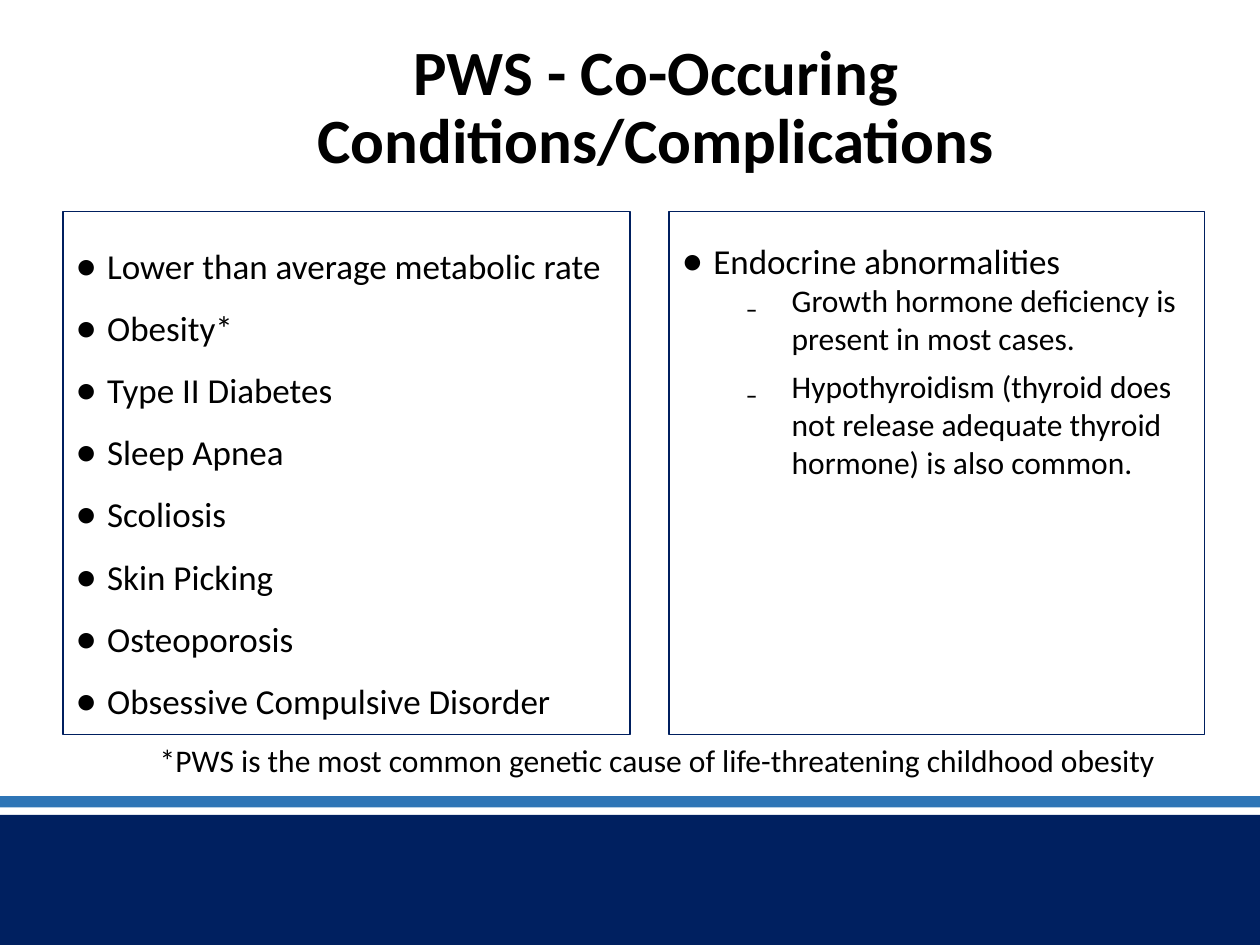
from dataclasses import dataclass

import pptx
import pptx.dml.color
import pptx.enum.shapes
import pptx.enum.text
import pptx.oxml
import pptx.oxml.ns
import pptx.util

Cm = pptx.util.Cm
Pt = pptx.util.Pt
ALIGN = pptx.enum.text.PP_ALIGN
ANCHOR = pptx.enum.text.MSO_ANCHOR
RECTANGLE = pptx.enum.shapes.MSO_SHAPE.RECTANGLE
FONT = "Calibri"
BLACK = "000000"


@dataclass(frozen=True)
class Area:
    left: float
    top: float
    width: float
    height: float

    def lengths(self) -> tuple:
        return Cm(self.left), Cm(self.top), Cm(self.width), Cm(self.height)


@dataclass(frozen=True)
class Level:
    mark: str
    size: float
    margin: float
    hanging: float
    depth: int = 0


@dataclass(frozen=True)
class Item:
    text: str
    level: Level
    line_spacing: float = 1.0
    before: float = 0


@dataclass(frozen=True)
class Panel:
    area: Area
    inset: float
    items: tuple


@dataclass(frozen=True)
class Band:
    area: Area
    color: str


CONDITION = Level("•", 20, 0.64, 0.64)
DETAIL = Level("₋", 18, 2.22, 0.95, 1)

BANDS = (
    Band(Area(0, 16.43, 25.4, 2.62), "002060"),
    Band(Area(0, 16.05, 25.4, 0.23), "2E75B6"),
)

ENDOCRINE = Panel(Area(13.49, 4.27, 10.8, 10.54), 0.13, (
    Item("Endocrine abnormalities", CONDITION, 1.5),
    Item("Growth hormone deficiency is present in most cases.", DETAIL),
    Item("Hypothyroidism (thyroid does not release adequate thyroid "
         "hormone) is also common.", DETAIL, before=6),
))

COMPLICATIONS = Panel(Area(1.27, 4.27, 11.43, 10.54), 0.25, tuple(
    Item(name, CONDITION, 1.48) for name in (
        "Lower than average metabolic rate",
        "Obesity*",
        "Type II Diabetes",
        "Sleep Apnea",
        "Scoliosis",
        "Skin Picking",
        "Osteoporosis",
        "Obsessive Compulsive Disorder",
    )
))


def rgb(color: str) -> pptx.dml.color.RGBColor:
    return pptx.dml.color.RGBColor.from_string(color)


def add_run(paragraph, text: str, size: float, bold: bool = False) -> None:
    run = paragraph.add_run()
    run.text = text
    run.font.name = FONT
    run.font.size = Pt(size)
    run.font.bold = bold
    run.font.color.rgb = rgb(BLACK)


def set_bullet(paragraph, level: Level) -> None:
    properties = paragraph._p.get_or_add_pPr()
    properties.set("marL", str(Cm(level.margin)))
    properties.set("indent", str(-Cm(level.hanging)))
    namespace = pptx.oxml.ns.nsdecls("a")
    for element in (
        f'<a:buClr {namespace}><a:srgbClr val="{BLACK}"/></a:buClr>',
        f'<a:buSzPct {namespace} val="125000"/>',
        f'<a:buFont {namespace} typeface="{FONT}"/>',
        f'<a:buChar {namespace} char="{level.mark}"/>',
    ):
        properties.append(pptx.oxml.parse_xml(element))


def add_rectangle(slide, area: Area):
    rectangle = slide.shapes.add_shape(RECTANGLE, *area.lengths())
    rectangle.shadow.inherit = False
    return rectangle


def draw_band(slide, band: Band) -> None:
    stripe = add_rectangle(slide, band.area)
    stripe.fill.solid()
    stripe.fill.fore_color.rgb = rgb(band.color)
    stripe.line.fill.background()


def draw_panel(slide, panel: Panel) -> None:
    frame = add_rectangle(slide, panel.area)
    frame.fill.background()
    frame.line.color.rgb = rgb("001F5F")
    frame.line.width = Pt(0.75)
    body = frame.text_frame
    body.word_wrap = True
    body.vertical_anchor = ANCHOR.TOP
    body.margin_top = body.margin_bottom = Cm(panel.inset)
    for index, item in enumerate(panel.items):
        paragraph = body.add_paragraph() if index else body.paragraphs[0]
        paragraph.level = item.level.depth
        paragraph.alignment = ALIGN.LEFT
        paragraph.line_spacing = item.line_spacing
        if item.before:
            paragraph.space_before = Pt(item.before)
        set_bullet(paragraph, item.level)
        add_run(paragraph, item.text, item.level.size)


def add_caption(slide, area: Area, text: str, size: float, bold: bool = False):
    caption = slide.shapes.add_textbox(*area.lengths()).text_frame
    caption.word_wrap = True
    add_run(caption.paragraphs[0], text, size, bold)
    return caption


def main() -> None:
    deck = pptx.Presentation()
    deck.slide_width, deck.slide_height = Cm(25.4), Cm(19.05)
    slide = deck.slides.add_slide(deck.slide_layouts[6])

    for band in BANDS:
        draw_band(slide, band)
    for panel in (ENDOCRINE, COMPLICATIONS):
        draw_panel(slide, panel)

    title = add_caption(slide, Area(2.74, 0.48, 20.96, 3.43),
                        "PWS - Co-Occuring Conditions/Complications", 36, True)
    title.vertical_anchor = ANCHOR.MIDDLE
    title.margin_top = title.margin_bottom = Cm(0.25)
    title.paragraphs[0].alignment = ALIGN.CENTER
    title.paragraphs[0].line_spacing = 0.9

    add_caption(slide, Area(2.97, 14.81, 21.16, 1.8),
                "*PWS is the most common genetic cause of "
                "life-threatening childhood obesity", 18)
    deck.save("out.pptx")


if __name__ == "__main__":
    main()
